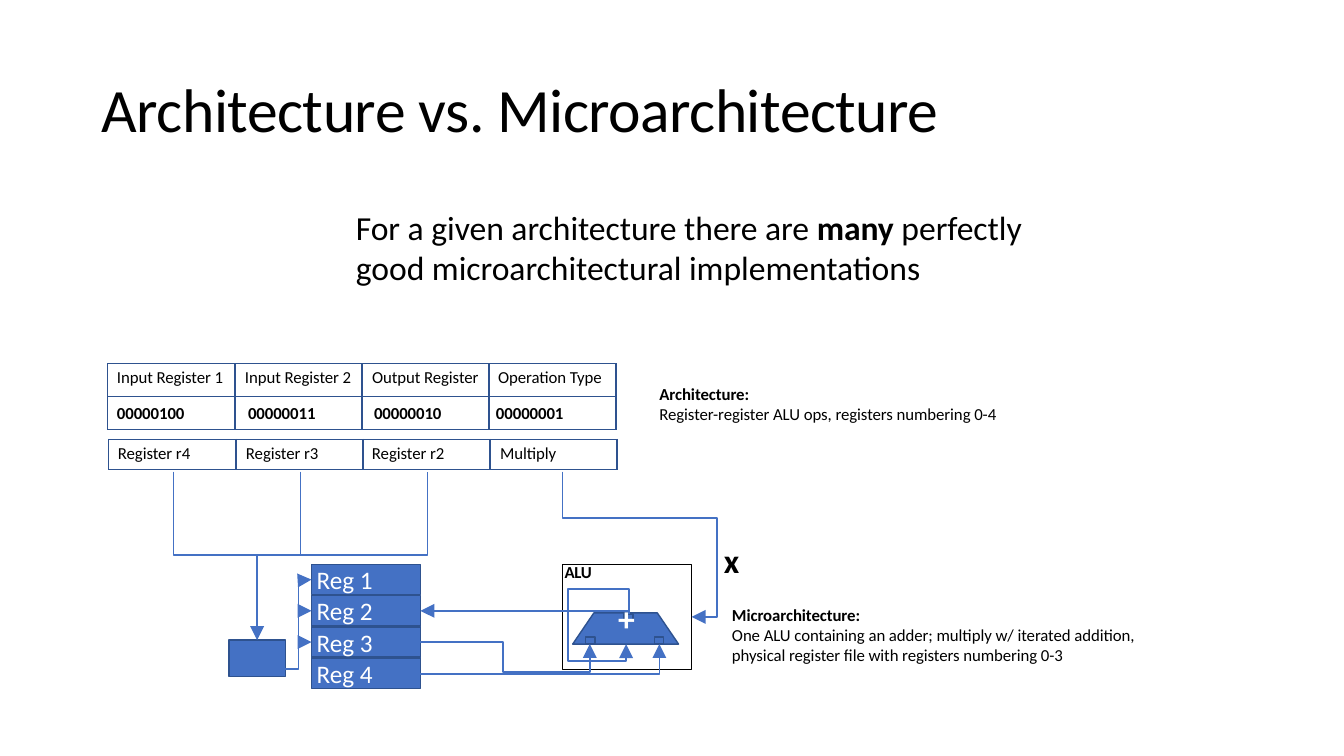
from dataclasses import dataclass

from lxml import etree
from pptx import Presentation
from pptx.dml.color import RGBColor
from pptx.enum.shapes import MSO_CONNECTOR, MSO_SHAPE
from pptx.enum.text import MSO_ANCHOR, PP_ALIGN
from pptx.oxml.ns import qn
from pptx.util import Pt

PX = 9144  # 100 px to the inch
STRAIGHT = MSO_CONNECTOR.STRAIGHT
RECTANGLE, TRAPEZOID = MSO_SHAPE.RECTANGLE, MSO_SHAPE.TRAPEZOID
TOP, MIDDLE = MSO_ANCHOR.TOP, MSO_ANCHOR.MIDDLE
LEFT = PP_ALIGN.LEFT
TOP_SIDE, LEFT_SIDE, RIGHT_SIDE = 0, 1, 3


@dataclass(frozen=True)
class Theme:
    font: str = "Calibri"
    ink: str = "000000"
    paper: str = "FFFFFF"
    blue: str = "4471C4"
    edge: str = "2E528F"
    title: int = 44
    body: int = 24
    register: int = 18
    small: int = 12
    outline: float = 1
    wire: float = 1.25


THEME = Theme()


@dataclass(frozen=True)
class Box:
    left: int
    top: int
    width: int
    height: int

    def inner(self, left, top, width, height):
        """Return a box placed relative to this one."""
        return Box(self.left + left, self.top + top, width, height)

    def points(self, *offsets):
        return [(self.left + x, self.top + y) for x, y in offsets]

    def emu(self):
        return [length * PX for length in (self.left, self.top, self.width, self.height)]


def rgb(value):
    return RGBColor.from_string(value)


def set_margins(frame, left=0, top=0):
    frame.margin_left, frame.margin_top = left * PX, top * PX
    frame.margin_right = frame.margin_bottom = 0


def format_run(run, size, color=THEME.ink, bold=False, tracking=0):
    """Format a run; tracking is in hundredths of a point."""
    font = run.font
    font.name, font.size, font.bold = THEME.font, Pt(size), bold
    font.color.rgb = rgb(color)
    if tracking:
        run._r.get_or_add_rPr().set("spc", str(tracking))


def add_text(slide, box, lines, size, color=THEME.ink, tracking=0, wrap=True):
    """Add a text box; each line is a list of (text, bold) pieces."""
    frame = slide.shapes.add_textbox(*box.emu()).text_frame
    frame.word_wrap = wrap
    set_margins(frame)
    for index, pieces in enumerate(lines):
        paragraph = frame.add_paragraph() if index else frame.paragraphs[0]
        for text, bold in pieces:
            run = paragraph.add_run()
            run.text = text
            format_run(run, size, color, bold, tracking)


def add_block(slide, box, fill=THEME.blue, line=THEME.edge, preset=RECTANGLE):
    shape = slide.shapes.add_shape(preset, *box.emu())
    shape.shadow.inherit = False
    if fill:
        shape.fill.solid()
        shape.fill.fore_color.rgb = rgb(fill)
    else:
        shape.fill.background()
    shape.line.color.rgb = rgb(line)
    shape.line.width = Pt(THEME.outline)
    return shape


def style_wire(wire, arrow):
    wire.line.color.rgb = rgb(THEME.blue)
    wire.line.width = Pt(THEME.wire)
    if arrow:
        line = wire._element.spPr.find(qn("a:ln"))
        etree.SubElement(line, qn("a:tailEnd"), type="triangle", w="lg", len="lg")


def add_elbow_wire(slide, points, arrow=True):
    builder = slide.shapes.build_freeform(*points[0], scale=PX)
    builder.add_line_segments(points[1:], close=False)
    wire = builder.convert_to_shape()
    wire.fill.background()
    wire.shadow.inherit = False
    style_wire(wire, arrow)


def add_straight_wire(slide, start, end, target=None, side=None):
    """Add a wire; with a target it gets an arrowhead and is joined to that side."""
    ends = [length * PX for length in (*start, *end)]
    wire = slide.shapes.add_connector(STRAIGHT, *ends)
    style_wire(wire, arrow=target is not None)
    etree.SubElement(wire._element.spPr, qn("a:effectLst"))
    if target is not None:
        wire.end_connect(target, side)


def add_cell_borders(cell):
    properties = cell._tc.get_or_add_tcPr()
    for side in ("lnL", "lnR", "lnT", "lnB"):
        line = etree.SubElement(properties, qn(f"a:{side}"), w=str(Pt(THEME.outline)))
        fill = etree.SubElement(line, qn("a:solidFill"))
        etree.SubElement(fill, qn("a:srgbClr"), val=THEME.edge)


def add_fields(slide, box, rows):
    """Add a table; each row is (texts, left margins, top margin, bold)."""
    columns = len(rows[0][0])
    table = slide.shapes.add_table(len(rows), columns, *box.emu()).table
    table.first_row = table.horz_banding = False
    for row, (texts, lefts, top, bold) in enumerate(rows):
        table.rows[row].height = box.height * PX // len(rows)
        for column, (text, left) in enumerate(zip(texts, lefts)):
            cell = table.cell(row, column)
            cell.text_frame.text = text
            format_run(cell.text_frame.paragraphs[0].runs[0], THEME.small, bold=bold, tracking=-5)
            set_margins(cell, left, top)
            cell.vertical_anchor = TOP
            add_cell_borders(cell)
            cell.fill.background()


def add_instruction(slide, box):
    names = ("Input Register 1", "Input Register 2", "Output Register", "Operation Type")
    codes = ("00000100", "00000011", "00000010", "00000001")
    meanings = ("Register r4", "Register r3", "Register r2", "Multiply")
    add_fields(slide, box.inner(0, 0, 504, 65),
               [(names, (9, 10, 10, 9), 4, False), (codes, (9, 13, 12, 7), 7, True)])
    add_fields(slide, box.inner(1, 75, 504, 30), [(meanings, (9, 10, 9, 10), 4, False)])


def add_registers(slide, box):
    registers = []
    for index in range(4):
        register = add_block(slide, box.inner(0, 31 * index, box.width, 30))
        frame = register.text_frame
        frame.text = f"Reg {index + 1}"
        frame.vertical_anchor = MIDDLE
        set_margins(frame, left=5)
        frame.paragraphs[0].alignment = LEFT
        format_run(frame.paragraphs[0].runs[0], THEME.register, THEME.paper)
        registers.append(register)
    return registers


def add_alu(slide, box):
    add_block(slide, box, fill=None, line=THEME.ink)
    adder = add_block(slide, box.inner(10, 48, 105, 31), preset=TRAPEZOID)
    adder.adjustments[0] = 0.68
    for left, top in ((23, 72), (91, 72), (61, 49)):
        add_block(slide, box.inner(left, top, 9, 7))
    add_text(slide, box.inner(55, 33, 19, 43), [[("+", True)]], THEME.body, THEME.paper, wrap=False)
    add_text(slide, box.inner(2, -3, 30, 23), [[("ALU", True)]], THEME.small, tracking=-20, wrap=False)


def add_datapath(slide, box):
    decoder = add_block(slide, box.inner(127, 175, 56, 36))
    registers = add_registers(slide, box.inner(209, 100, 108, 123))
    add_alu(slide, box.inner(458, 100, 128, 104))
    add_text(slide, box.inner(618, 76, 20, 41), [[("x", True)]], THEME.body, wrap=False)

    operand_bus = ((72, 8), (72, 91), (324, 91), (324, 8))
    add_elbow_wire(slide, box.points(*operand_bus), arrow=False)
    arrows = (
        ((183, 204), (196, 204), (196, 115), (209, 115)),  # decoder to Reg 1
        ((317, 177), (399, 177), (399, 207), (485, 207), (485, 179)),  # Reg 3 to adder
        ((317, 209), (554, 209), (554, 179)),  # Reg 4 to adder
        ((458, 8), (458, 54), (611, 54), (611, 152), (586, 152)),  # operation to ALU
        ((524, 149), (524, 124), (463, 124), (463, 196), (521, 196), (521, 179)),  # iteration
    )
    for offsets in arrows:
        add_elbow_wire(slide, box.points(*offsets))

    straight_wires = (
        ((198, 8), (198, 91), None, None),
        ((155, 91), (155, 175), decoder, TOP_SIDE),
        ((196, 146), (209, 146), registers[1], LEFT_SIDE),
        ((196, 177), (209, 177), registers[2], LEFT_SIDE),
        ((524, 146), (317, 146), registers[1], RIGHT_SIDE),
    )
    for start, end, target, side in straight_wires:
        add_straight_wire(slide, *box.points(start, end), target, side)


def add_caption(slide, box, heading, text):
    add_text(slide, box, [[(heading, True)], [(text, False)]], THEME.small, tracking=-5)


def build_slide(slide):
    add_text(slide, Box(101, 70, 1100, 80), [[("Architecture vs. Microarchitecture", False)]],
             THEME.title, tracking=-40)
    statement = [("For a given architecture there are ", False), ("many ", True),
                 ("perfectly good microarchitectural implementations", False)]
    add_text(slide, Box(353, 205, 680, 82), [statement], THEME.body, tracking=-3)
    add_instruction(slide, Box(107, 361, 505, 105))
    add_datapath(slide, Box(100, 460, 640, 230))
    add_caption(slide, Box(654, 381, 360, 42), "Architecture:",
                "Register-register ALU ops, registers numbering 0-4")
    add_caption(slide, Box(726, 600, 415, 62), "Microarchitecture:",
                "One ALU containing an adder; multiply w/ iterated addition, "
                "physical register file with registers numbering 0-3")


def main():
    presentation = Presentation()
    presentation.slide_width, presentation.slide_height = 1333 * PX, 750 * PX
    build_slide(presentation.slides.add_slide(presentation.slide_layouts[6]))
    presentation.save("out.pptx")


if __name__ == "__main__":
    main()
